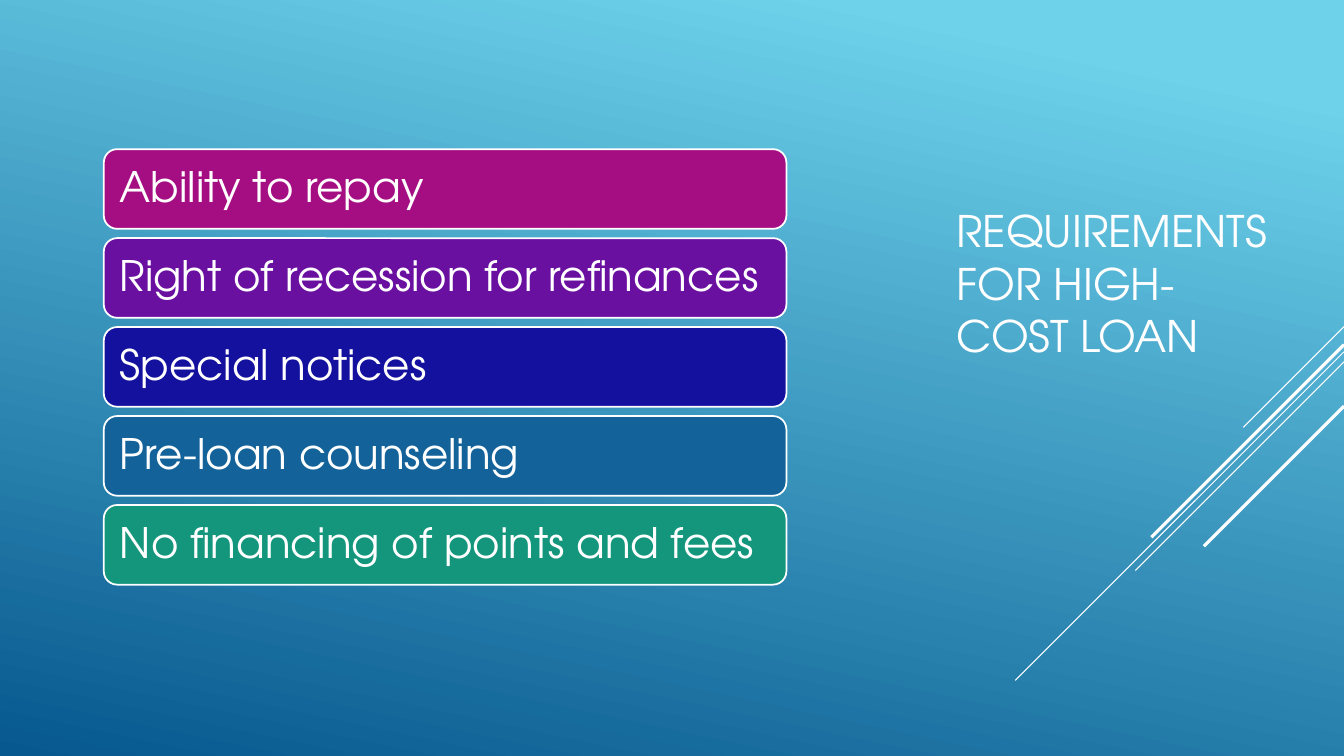
from dataclasses import dataclass

import pptx
import pptx.dml.color
import pptx.enum.shapes
import pptx.enum.text
import pptx.oxml.ns
import pptx.shapes.autoshape
import pptx.slide
import pptx.text.text
import pptx.util
from lxml import etree

Inches = pptx.util.Inches
FONT = "TeX Gyre Adventor"
COLORS = {
    "sky": "6ED2EB",
    "deep": "06588E",
    "white": "FFFFFF",
    "magenta": "A50E82",
    "purple": "6A10A1",
    "navy": "13119D",
    "blue": "13639A",
    "green": "14967C",
}
SLIDE_WIDTH, SLIDE_HEIGHT = 13.33, 7.5
BAR_LEFT, BAR_TOP, BAR_WIDTH, BAR_HEIGHT = 1.03, 1.48, 6.77, 0.79
BAR_PITCH = 0.8825


@dataclass
class Requirement:
    text: str
    color: str


@dataclass
class Streak:
    """A 45-degree line running down and left from the right slide edge."""
    top: float
    reach: float
    weight: float


REQUIREMENTS = [
    Requirement("Ability to repay", "magenta"),
    Requirement("Right of recession for refinances", "purple"),
    Requirement("Special notices", "navy"),
    Requirement("Pre-loan counseling", "blue"),
    Requirement("No financing of points and fees", "green"),
]
STREAKS = [
    Streak(3.24, 1.0, 0.75),
    Streak(3.49, 3.26, 0.75),
    Streak(3.59, 2.07, 0.75),
    Streak(3.42, 1.91, 2.25),
    Streak(4.03, 1.39, 2.25),
]


def rgb(name: str) -> pptx.dml.color.RGBColor:
    return pptx.dml.color.RGBColor.from_string(COLORS[name])


def style_text(frame: pptx.text.text.TextFrame, text: str, size: float) -> None:
    frame.text = text
    frame.word_wrap = True
    frame.vertical_anchor = pptx.enum.text.MSO_ANCHOR.MIDDLE
    paragraph = frame.paragraphs[0]
    paragraph.alignment = pptx.enum.text.PP_ALIGN.LEFT
    font = paragraph.runs[0].font
    font.name = FONT
    font.size = pptx.util.Pt(size)
    font.color.rgb = rgb("white")


def add_backdrop(slide: pptx.slide.Slide) -> None:
    shape = slide.shapes.add_shape(
        pptx.enum.shapes.MSO_SHAPE.RECTANGLE,
        0, 0, Inches(SLIDE_WIDTH), Inches(SLIDE_HEIGHT))
    shape.shadow.inherit = False
    shape.line.fill.background()
    shape.fill.gradient()
    shape.fill.gradient_angle = 258
    stops = [("sky", 0.1), ("deep", 1.0)]
    for stop, (color, position) in zip(shape.fill.gradient_stops, stops):
        stop.color.rgb = rgb(color)
        stop.position = position


def add_streak(slide: pptx.slide.Slide, streak: Streak) -> None:
    connector = slide.shapes.add_connector(
        pptx.enum.shapes.MSO_CONNECTOR.STRAIGHT,
        Inches(SLIDE_WIDTH), Inches(streak.top),
        Inches(SLIDE_WIDTH - streak.reach), Inches(streak.top + streak.reach))
    connector.line.color.rgb = rgb("white")
    connector.line.width = pptx.util.Pt(streak.weight)
    etree.SubElement(connector._element.spPr, pptx.oxml.ns.qn("a:effectLst"))


def add_title(slide: pptx.slide.Slide) -> None:
    box = slide.shapes.add_textbox(
        Inches(9.39), Inches(1.03), Inches(3.33), Inches(3.55))
    style_text(box.text_frame, "REQUIREMENTS FOR HIGH-COST LOAN", 31)


def add_bar(slide: pptx.slide.Slide, requirement: Requirement, top: float) -> None:
    shape = slide.shapes.add_shape(
        pptx.enum.shapes.MSO_SHAPE.ROUNDED_RECTANGLE,
        Inches(BAR_LEFT), Inches(top), Inches(BAR_WIDTH), Inches(BAR_HEIGHT))
    shape.shadow.inherit = False
    shape.fill.solid()
    shape.fill.fore_color.rgb = rgb(requirement.color)
    shape.line.color.rgb = rgb("white")
    shape.line.width = pptx.util.Pt(1.25)
    frame = shape.text_frame
    style_text(frame, requirement.text, 30)
    frame.paragraphs[0].line_spacing = 0.9
    frame.margin_left = frame.margin_right = Inches(0.12)
    frame.margin_top = frame.margin_bottom = Inches(0.12)


def main() -> None:
    presentation = pptx.Presentation()
    presentation.slide_width = Inches(SLIDE_WIDTH)
    presentation.slide_height = Inches(SLIDE_HEIGHT)
    slide = presentation.slides.add_slide(presentation.slide_layouts[6])
    add_backdrop(slide)
    for streak in STREAKS:
        add_streak(slide, streak)
    add_title(slide)
    for index, requirement in enumerate(REQUIREMENTS):
        add_bar(slide, requirement, BAR_TOP + index * BAR_PITCH)
    presentation.save("out.pptx")


if __name__ == "__main__":
    main()
